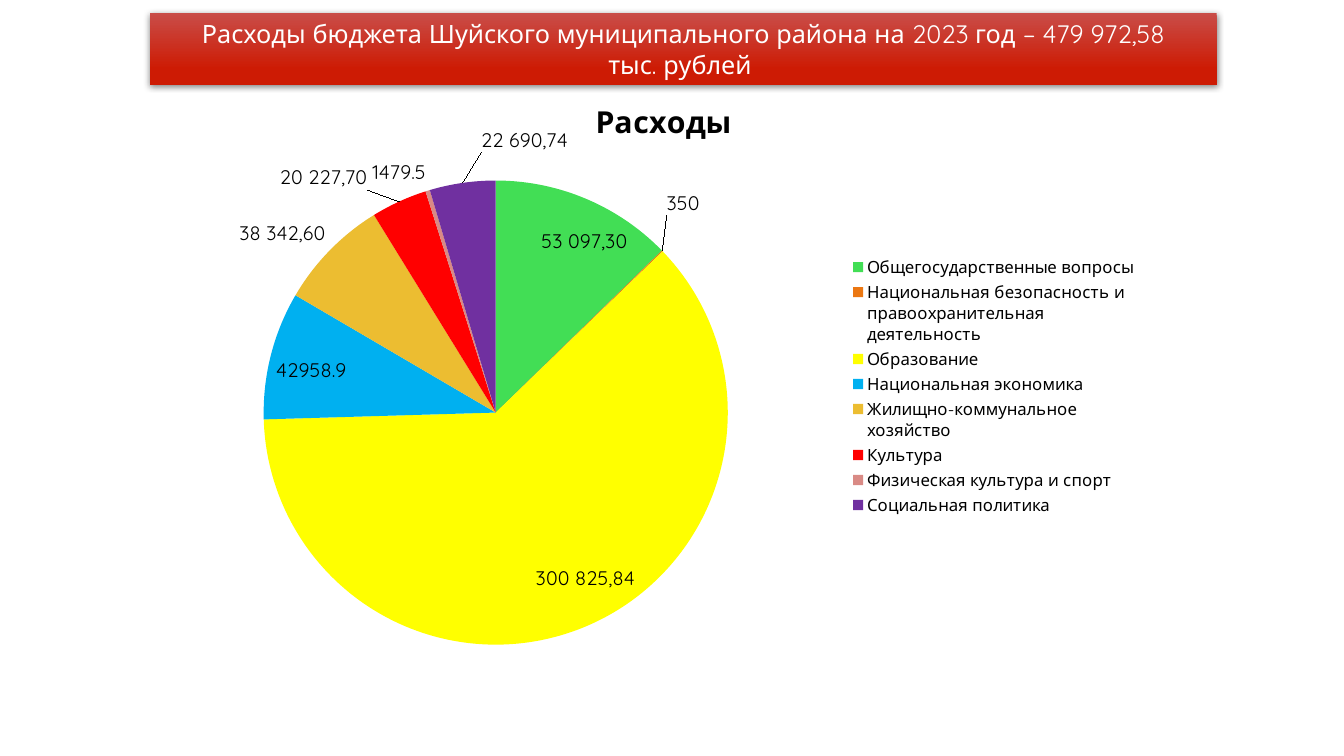
from lxml import etree
from pptx import Presentation
from pptx.chart.data import CategoryChartData
from pptx.dml.color import RGBColor
from pptx.enum.chart import XL_CHART_TYPE as Kind
from pptx.enum.chart import XL_LABEL_POSITION as Spot
from pptx.enum.chart import XL_LEGEND_POSITION as Side
from pptx.enum.text import MSO_ANCHOR, MSO_AUTO_SIZE, PP_ALIGN
from pptx.oxml import parse_xml
from pptx.oxml.ns import nsdecls, qn
from pptx.util import Pt

FONT = "Quicksand"
BLACK = RGBColor(0x00, 0x00, 0x00)
WHITE = RGBColor(0xFF, 0xFF, 0xFF)
ROSE = RGBColor(0xC9, 0x4D, 0x48)
BRICK = RGBColor(0xCD, 0x1B, 0x04)
GREEN = RGBColor(0x42, 0xDE, 0x55)
ORANGE = RGBColor(0xEB, 0x77, 0x12)
YELLOW = RGBColor(0xFF, 0xFF, 0x00)
BLUE = RGBColor(0x00, 0xB0, 0xF0)
GOLD = RGBColor(0xEC, 0xBD, 0x31)
RED = RGBColor(0xFF, 0x00, 0x00)
PINK = RGBColor(0xD9, 0x8A, 0x85)
PURPLE = RGBColor(0x70, 0x30, 0xA0)

# name, value, colour, label text, label shift as a share of the chart
PARTS = [
    ("Общегосударственные вопросы", 61281.2, GREEN, "53 097,30", None),
    ("Национальная безопасность и правоохранительная деятельность",
     350, ORANGE, None, (0, -0.05)),
    ("Образование", 297971.7, YELLOW, "300 825,84", None),
    ("Национальная экономика", 42958.9, BLUE, None, None),
    ("Жилищно-коммунальное хозяйство", 37523.9, GOLD, "38 342,60", None),
    ("Культура ", 18814.4, RED, "20 227,70", (-0.03, -0.01)),
    ("Физическая культура и спорт", 1479.5, PINK, None, None),
    ("Социальная политика", 22108.2, PURPLE, "22 690,74", (0.11, -0.04)),
]


def place(host, index, **items):
    """Give a chart part a manual layout."""
    for old in host.findall(qn("c:layout")):
        host.remove(old)
    layout = etree.Element(qn("c:layout"))
    manual = etree.SubElement(layout, qn("c:manualLayout"))
    for name, value in items.items():
        etree.SubElement(manual, qn("c:" + name)).set("val", str(value))
    host.insert(index, layout)


def style(font, size, color=BLACK):
    font.name = FONT
    font.size = Pt(size)
    font.color.rgb = color


prs = Presentation()
prs.slide_width, prs.slide_height = Pt(960), Pt(540)
slide = prs.slides.add_slide(prs.slide_layouts[5])

# Banner
title = slide.shapes.title
title.left, title.top = Pt(107.3), Pt(9.4)
title.width, title.height = Pt(761.8), Pt(51)
title.fill.gradient()
title.fill.gradient_angle = 270
for stop, color, spot in zip(title.fill.gradient_stops, (ROSE, BRICK), (0, 0.78)):
    stop.color.rgb = color
    stop.position = spot
title.element.spPr.append(parse_xml(
    f'<a:effectLst {nsdecls("a")}>'
    '<a:outerShdw blurRad="57150" dist="19050" dir="5400000" rotWithShape="0">'
    '<a:srgbClr val="000000"><a:alpha val="48000"/></a:srgbClr>'
    '</a:outerShdw></a:effectLst>'))
frame = title.text_frame
frame.text = ("Расходы бюджета Шуйского муниципального района на 2023 год – 479 972,58\n"
              "тыс. рублей ")
frame.word_wrap = True
frame.auto_size = MSO_AUTO_SIZE.NONE
frame.vertical_anchor = MSO_ANCHOR.MIDDLE
for para in frame.paragraphs:
    para.alignment = PP_ALIGN.CENTER
    style(para.runs[0].font, 18, WHITE)

# Pie chart
data = CategoryChartData()
data.categories = [part[0] for part in PARTS]
data.add_series("Расходы", [part[1] for part in PARTS])
chart = slide.shapes.add_chart(
    Kind.PIE, Pt(128.2), Pt(54.7), Pt(691.9), Pt(442.1), data).chart
style(chart.font, 18)
chart.has_title = True
chart.chart_title.include_in_layout = False
head = chart.chart_title.text_frame
head.text = "Расходы"
style(head.paragraphs[0].runs[0].font, 21.6)
head.paragraphs[0].runs[0].font.bold = True

chart.has_legend = True
chart.legend.position = Side.RIGHT
chart.legend.include_in_layout = False
style(chart.legend.font, 12)

plot = chart.plots[0]
plot.vary_by_categories = True
series = plot.series[0]
labels = series.data_labels
labels.show_value = True
labels.number_format = "General"
labels.number_format_is_linked = False
labels.position = Spot.BEST_FIT
style(labels.font, 14)

for i, (name, value, color, text, shift) in enumerate(PARTS):
    point = series.points[i]
    point.format.fill.solid()
    point.format.fill.fore_color.rgb = color
    point.format.line.fill.background()
    if not (text or shift):
        continue
    label = point.data_label
    if text:
        label.text_frame.text = text
        style(label.text_frame.paragraphs[0].runs[0].font, 14)
    else:
        style(label.font, 14)
    label.position = Spot.BEST_FIT
    if shift:
        node = chart.element.xpath(f'.//c:dLbl[c:idx/@val="{i}"]')[0]
        place(node, 1, x=shift[0], y=shift[1])

place(chart.element.xpath(".//c:plotArea")[0], 0, layoutTarget="inner",
      xMode="edge", yMode="edge", x=0.05, y=0.168, w=0.553, h=0.75)

prs.save("out.pptx")
